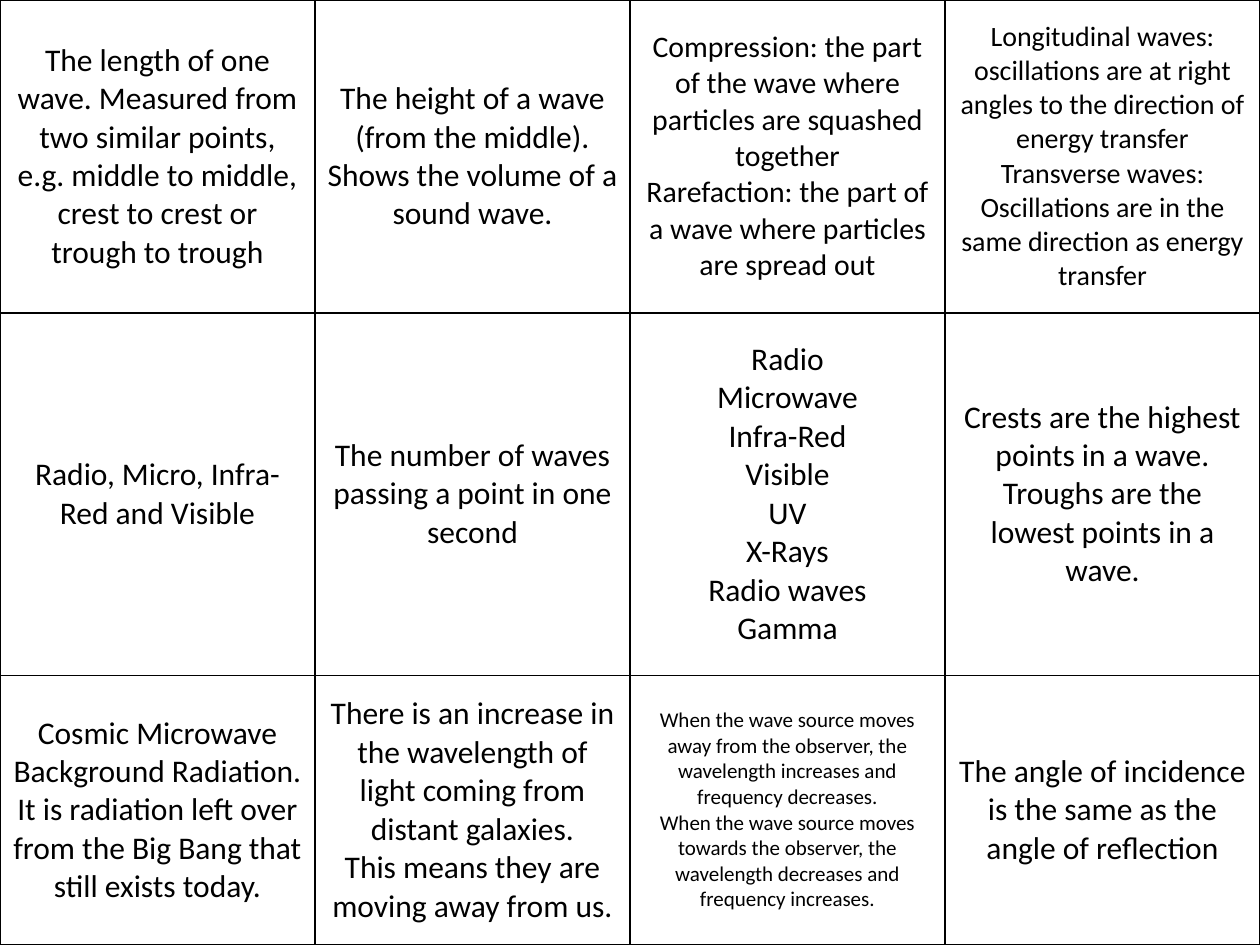
from lxml.etree import SubElement
from pptx import Presentation
from pptx.dml.color import RGBColor
from pptx.enum.text import MSO_ANCHOR, PP_ALIGN
from pptx.oxml.ns import qn
from pptx.util import Pt

WIDTH, HEIGHT = 720, 540
ROW_HEIGHTS = (178.8, 207.2, 154)
BODY_SIZE = 18
INK, PAPER = "000000", "FFFFFF"

# Each answer is (paragraphs, font size).
ANSWERS = [
    [
        (["The length of one wave. Measured from two similar points, e.g. middle to middle, "
          "crest to crest or trough to trough"], BODY_SIZE),
        (["The height of a wave (from the middle).",
          "Shows the volume of a sound wave."], BODY_SIZE),
        (["Compression: the part of the wave where particles are squashed together",
          "Rarefaction: the part of a wave where particles are spread out"], 17),
        (["Longitudinal waves: oscillations are at right angles to the direction of energy transfer",
          "Transverse waves:",
          "Oscillations are in the same direction as energy transfer"], 16),
    ],
    [
        (["Radio, Micro, Infra-Red and Visible"], BODY_SIZE),
        (["The number of waves passing a point in one second"], BODY_SIZE),
        (["Radio", "Microwave", "Infra-Red", "Visible", "UV", "X-Rays",
          "Radio waves", "Gamma"], BODY_SIZE),
        (["Crests are the highest points in a wave.",
          "Troughs are the lowest points in a wave."], BODY_SIZE),
    ],
    [
        (["Cosmic Microwave Background Radiation. It is radiation left over from the Big Bang "
          "that still exists today."], BODY_SIZE),
        (["There is an increase in the wavelength of light coming from distant galaxies.",
          "This means they are moving away from us."], BODY_SIZE),
        (["When the wave source moves away from the observer, the wavelength increases "
          "and frequency decreases.",
          "When the wave source moves towards the observer, the wavelength decreases "
          "and frequency increases."], 12),
        (["The angle of incidence is the same as the angle of reflection"], BODY_SIZE),
    ],
]


def rgb(value):
    return RGBColor.from_string(value)


def write(frame, paragraphs, size=BODY_SIZE, font="Calibri", color=INK, align=PP_ALIGN.CENTER):
    for index, text in enumerate(paragraphs):
        paragraph = frame.paragraphs[0] if index == 0 else frame.add_paragraph()
        paragraph.alignment = align
        run = paragraph.add_run()
        run.text = text
        run.font.size = Pt(size)
        run.font.name = font
        run.font.bold = False
        run.font.color.rgb = rgb(color)


def add_borders(cell, color=INK, width=1):
    """Line all four sides; borders must precede the fill in tcPr."""
    properties = cell._tc.get_or_add_tcPr()
    for position, side in enumerate(("lnL", "lnR", "lnT", "lnB")):
        line = SubElement(properties, qn(f"a:{side}"), w=str(Pt(width)))
        properties.insert(position, line)
        fill = SubElement(line, qn("a:solidFill"))
        SubElement(fill, qn("a:srgbClr"), val=color)


def main():
    deck = Presentation()
    deck.slide_width, deck.slide_height = Pt(WIDTH), Pt(HEIGHT)
    slide = deck.slides.add_slide(deck.slide_layouts[6])

    columns = len(ANSWERS[0])
    grid = slide.shapes.add_table(len(ANSWERS), columns, 0, 0, Pt(WIDTH), Pt(HEIGHT)).table
    grid.first_row = grid.horz_banding = False
    for column in grid.columns:
        column.width = Pt(WIDTH / columns)
    for row, height, answers in zip(grid.rows, ROW_HEIGHTS, ANSWERS):
        row.height = Pt(height)
        for cell, (paragraphs, size) in zip(row.cells, answers):
            cell.vertical_anchor = MSO_ANCHOR.MIDDLE
            cell.fill.solid()
            cell.fill.fore_color.rgb = rgb(PAPER)
            add_borders(cell)
            write(cell.text_frame, paragraphs, size=size)

    deck.save("out.pptx")


if __name__ == "__main__":
    main()
